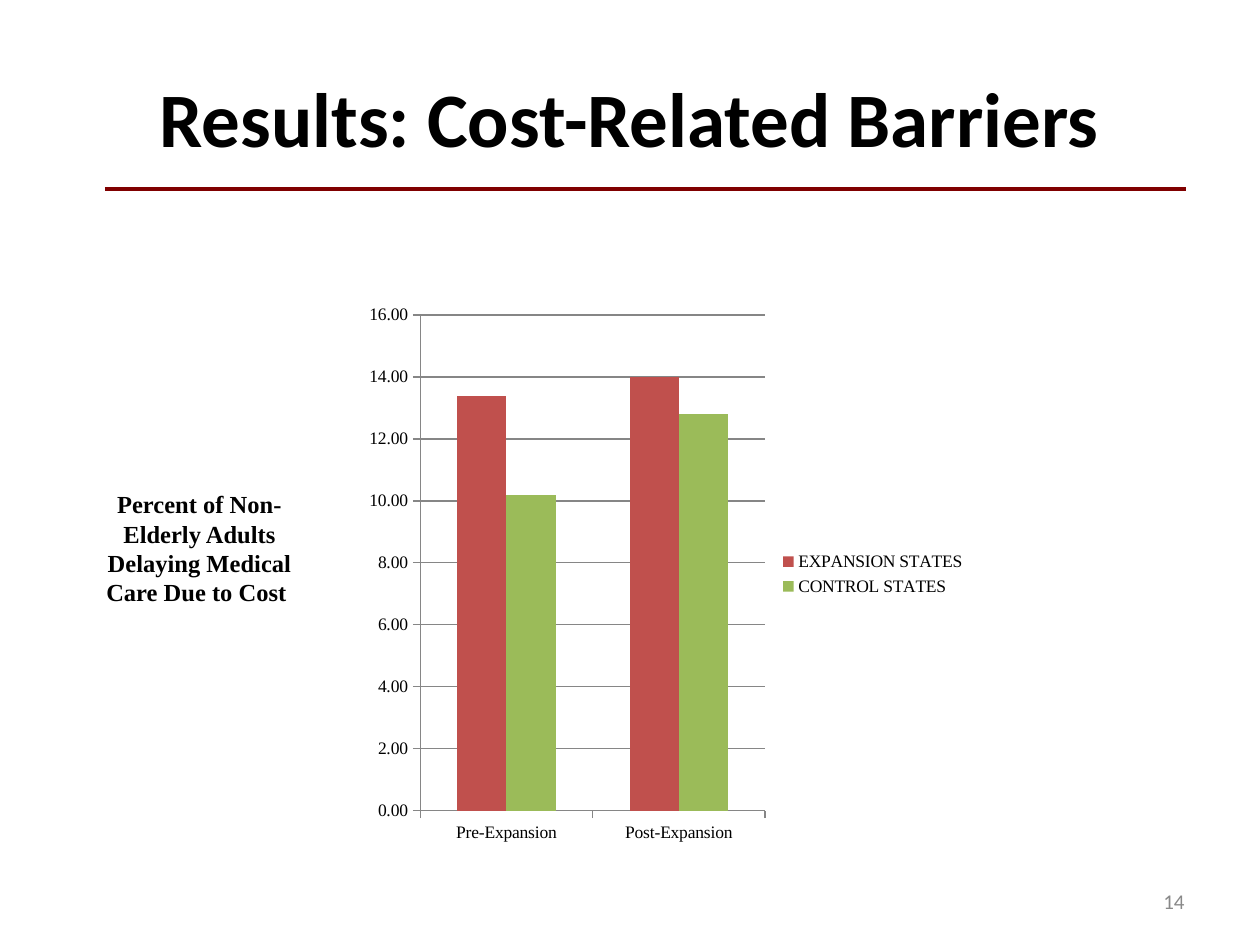
from lxml import etree
from pptx import Presentation
from pptx.chart.data import CategoryChartData
from pptx.dml.color import RGBColor
from pptx.enum.chart import XL_CHART_TYPE, XL_LEGEND_POSITION, XL_TICK_MARK
from pptx.enum.shapes import MSO_CONNECTOR
from pptx.enum.text import MSO_ANCHOR, PP_ALIGN
from pptx.oxml.ns import qn
from pptx.util import Pt

BLACK = RGBColor(0x00, 0x00, 0x00)
MAROON = RGBColor(0x80, 0x00, 0x00)
GRAY = RGBColor(0x89, 0x89, 0x89)
AXIS_GRAY = RGBColor(0x86, 0x86, 0x86)
RED = RGBColor(0xC0, 0x50, 0x4D)
GREEN = RGBColor(0x9B, 0xBB, 0x59)

SANS = "Calibri"
SERIF = "Times New Roman"

CLUSTERED = XL_CHART_TYPE.COLUMN_CLUSTERED
LEGEND_RIGHT = XL_LEGEND_POSITION.RIGHT
TICK_OUTSIDE = XL_TICK_MARK.OUTSIDE
STRAIGHT = MSO_CONNECTOR.STRAIGHT
TOP, MIDDLE = MSO_ANCHOR.TOP, MSO_ANCHOR.MIDDLE
CENTER, RIGHT = PP_ALIGN.CENTER, PP_ALIGN.RIGHT

CATEGORIES = ["Pre-Expansion", "Post-Expansion"]
SERIES = [
    ("EXPANSION STATES", (13.4, 14), RED),
    ("CONTROL STATES", (10.2, 12.8), GREEN),
]


def style_font(font, name, size, color, bold=False):
    """Set the typeface, size, colour and weight of a font."""
    font.name = name
    font.size = Pt(size)
    font.color.rgb = color
    font.bold = bold


def add_text(page, bounds, text, name, size, color, bold, align, anchor):
    """Add a wrapped text box with one paragraph."""
    box = page.shapes.add_textbox(*map(Pt, bounds))
    frame = box.text_frame
    frame.word_wrap = True
    frame.vertical_anchor = anchor
    para = frame.paragraphs[0]
    para.text = text
    para.alignment = align
    style_font(para.font, name, size, color, bold)


def add_rule(page, left, right, top):
    """Add the horizontal rule under the title."""
    rule = page.shapes.add_connector(STRAIGHT, Pt(left), Pt(top), Pt(right), Pt(top))
    rule.line.color.rgb = MAROON
    rule.line.width = Pt(2.25)
    etree.SubElement(rule._element.spPr, qn("a:effectLst"))


def style_axis(axis):
    """Give an axis a thin gray line and outside ticks."""
    axis.major_tick_mark = TICK_OUTSIDE
    axis.format.line.color.rgb = AXIS_GRAY
    axis.format.line.width = Pt(0.75)


def add_barrier_chart(page, bounds):
    """Add the column chart comparing expansion and control states."""
    data = CategoryChartData(number_format="0.00")
    data.categories = CATEGORIES
    for name, values, _ in SERIES:
        data.add_series(name, values)
    chart = page.shapes.add_chart(CLUSTERED, *map(Pt, bounds), data).chart
    style_font(chart.font, SERIF, 10, BLACK)
    chart.has_title = False
    chart.has_legend = True
    chart.legend.position = LEGEND_RIGHT
    chart.legend.include_in_layout = False

    style_axis(chart.category_axis)
    value_axis = chart.value_axis
    style_axis(value_axis)
    value_axis.minimum_scale = 0
    value_axis.maximum_scale = 16
    value_axis.major_unit = 2
    value_axis.tick_labels.number_format = "0.00"
    value_axis.tick_labels.number_format_is_linked = False
    gridline = value_axis.major_gridlines.format.line
    gridline.color.rgb = AXIS_GRAY
    gridline.width = Pt(0.75)

    plot = chart.plots[0]
    plot.vary_by_categories = False
    plot.gap_width = 150
    plot.overlap = 0
    for series, (_, _, color) in zip(plot.series, SERIES):
        series.format.fill.solid()
        series.format.fill.fore_color.rgb = color


def main():
    """Build the slide and save the deck."""
    deck = Presentation()
    deck.slide_width = Pt(720)
    deck.slide_height = Pt(540)
    page = deck.slides.add_slide(deck.slide_layouts[6])
    add_text(page, (0, 21.6, 720, 90), "Results: Cost-Related Barriers",
             SANS, 44, BLACK, True, CENTER, MIDDLE)
    add_rule(page, 60, 678, 108)
    add_text(page, (516, 500.4, 168, 28.8), "14",
             SANS, 12, GRAY, False, RIGHT, MIDDLE)
    add_text(page, (48, 276, 132, 75),
             "Percent of Non-Elderly Adults Delaying Medical Care Due to Cost ",
             SERIF, 14, BLACK, True, CENTER, TOP)
    add_barrier_chart(page, (204, 168, 355, 320))
    deck.save("out.pptx")


if __name__ == "__main__":
    main()
